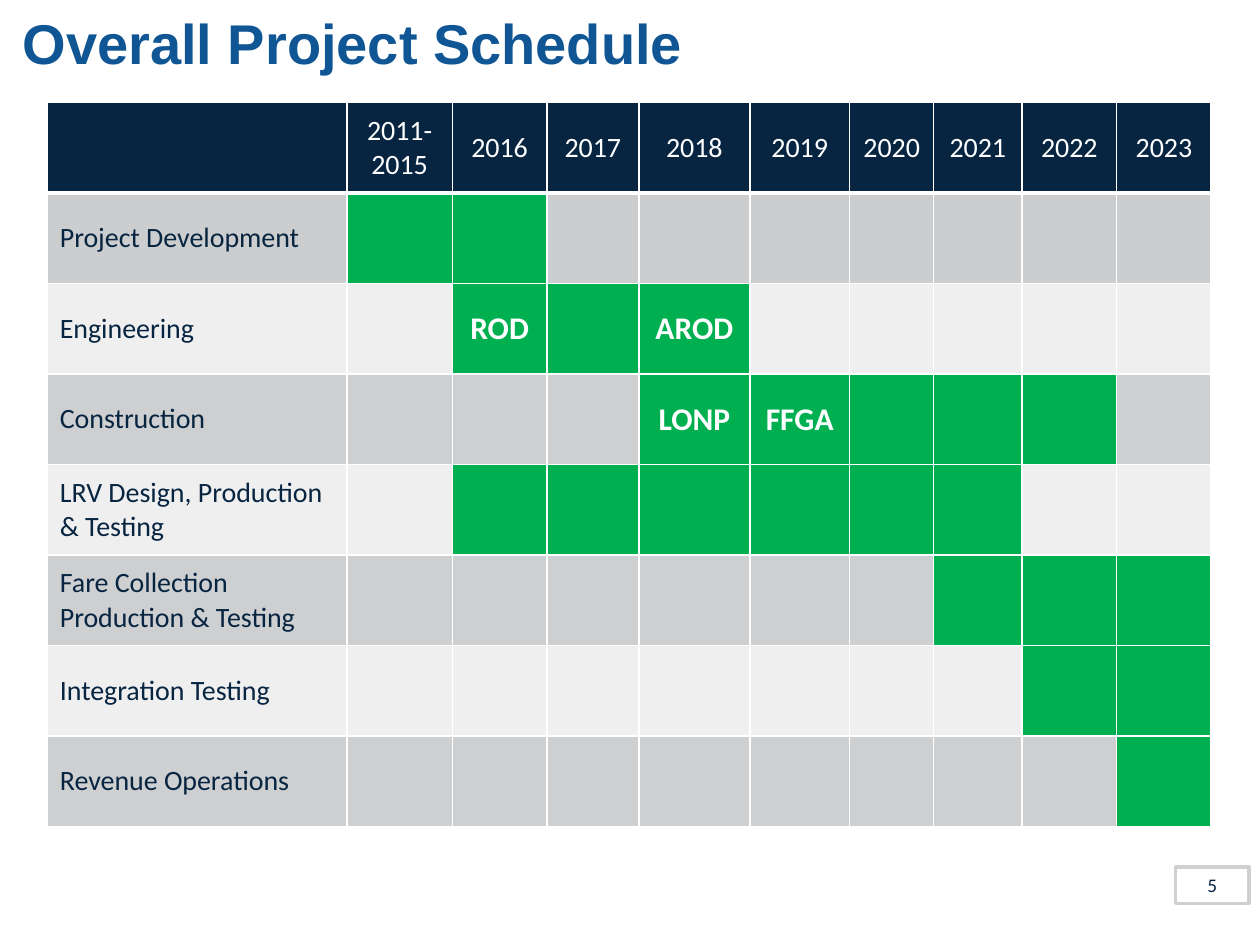
from lxml.etree import SubElement
from pptx import Presentation
from pptx.dml.color import RGBColor
from pptx.enum.shapes import MSO_SHAPE as Preset
from pptx.enum.text import MSO_ANCHOR as Anchor, PP_ALIGN as Align
from pptx.oxml.ns import qn
from pptx.util import Pt

NAVY = RGBColor(0x07, 0x25, 0x41)
BLUE = RGBColor(0x10, 0x55, 0x94)
GREEN = RGBColor(0x00, 0xB0, 0x50)
WHITE = RGBColor(0xFF, 0xFF, 0xFF)
EDGE_GREY = RGBColor(0xD0, 0xD0, 0xD2)
FIRST_GREY = RGBColor(0xCC, 0xCD, 0xCF)
DARK_GREY = RGBColor(0xCE, 0xCF, 0xD1)
LIGHT_GREY = RGBColor(0xEF, 0xEF, 0xF0)

YEARS = ["2011-2015"] + [str(year) for year in range(2016, 2024)]
COLUMN_WIDTHS = [171.2, 60.3, 54, 52.6, 63.4, 57.1, 48, 50.4, 54.2, 54]
ROW_HEIGHT = 51.75
PHASES = [
    ("Project Development", 1, 2, {}),
    ("Engineering", 2, 4, {2: "ROD", 4: "AROD"}),
    ("Construction", 4, 8, {4: "LONP", 5: "FFGA"}),
    ("LRV Design, Production & Testing", 2, 7, {}),
    ("Fare Collection Production & Testing", 7, 9, {}),
    ("Integration Testing", 8, 9, {}),
    ("Revenue Operations", 9, 9, {}),
]


class SlideBuilder:
    """Draws the elements of one slide in a shared style."""

    def __init__(self, slide):
        self.slide = slide
        self.title_font = {"name": "Arial", "size": Pt(32), "bold": True}
        self.body_font = {"name": "Calibri", "size": Pt(16), "bold": False}
        self.milestone_font = {"name": "Calibri", "size": Pt(18), "bold": True}
        self.number_font = {"name": "Calibri", "size": Pt(11), "bold": False}

    def label(self, frame, text, font, color, align=Align.LEFT):
        frame.word_wrap = True
        frame.vertical_anchor = Anchor.MIDDLE
        paragraph = frame.paragraphs[0]
        paragraph.alignment = align
        run = paragraph.add_run()
        run.text = text
        for name, value in font.items():
            setattr(run.font, name, value)
        run.font.color.rgb = color

    def title(self, text, left, top, width, height):
        heading = self.slide.shapes.add_textbox(Pt(left), Pt(top), Pt(width), Pt(height))
        self.label(heading.text_frame, text, self.title_font, BLUE)

    def page_number(self, text, left, top, width, height):
        badge = self.slide.shapes.add_shape(
            Preset.RECTANGLE, Pt(left), Pt(top), Pt(width), Pt(height))
        badge.shadow.inherit = False
        badge.fill.solid()
        badge.fill.fore_color.rgb = WHITE
        badge.line.color.rgb = EDGE_GREY
        badge.line.width = Pt(2)
        self.label(badge.text_frame, text, self.number_font, NAVY, Align.CENTER)

    def cell(self, cell, color, bottom=1):
        properties = cell._tc.get_or_add_tcPr()
        for side, width in {"L": 1, "R": 1, "T": 1, "B": bottom}.items():
            edge = SubElement(properties, qn(f"a:ln{side}"), w=str(Pt(width)))
            paint = SubElement(edge, qn("a:solidFill"))
            SubElement(paint, qn("a:srgbClr"), val=str(WHITE))
        cell.fill.solid()
        cell.fill.fore_color.rgb = color
        cell.vertical_anchor = Anchor.MIDDLE

    def schedule(self, left, top):
        row_count = len(PHASES) + 1
        table = self.slide.shapes.add_table(
            row_count, len(COLUMN_WIDTHS), Pt(left), Pt(top),
            Pt(sum(COLUMN_WIDTHS)), Pt(ROW_HEIGHT * row_count)).table
        for column, width in zip(table.columns, COLUMN_WIDTHS):
            column.width = Pt(width)
        for row in table.rows:
            row.height = Pt(ROW_HEIGHT)
        for index, year in enumerate([""] + YEARS):
            header = table.cell(0, index)
            self.cell(header, NAVY, bottom=3)
            if year:
                self.label(header.text_frame, year, self.body_font, WHITE, Align.CENTER)
        for number, (phase, start, end, milestones) in enumerate(PHASES, 1):
            band = LIGHT_GREY if number % 2 == 0 else DARK_GREY
            if number == 1:
                band = FIRST_GREY
            for index in range(len(COLUMN_WIDTHS)):
                slot = table.cell(number, index)
                self.cell(slot, GREEN if start <= index <= end else band)
                if index in milestones:
                    self.label(slot.text_frame, milestones[index],
                               self.milestone_font, WHITE, Align.CENTER)
            self.label(table.cell(number, 0).text_frame, phase, self.body_font, NAVY)


def main():
    deck = Presentation()
    deck.slide_width, deck.slide_height = Pt(720), Pt(540)
    builder = SlideBuilder(deck.slides.add_slide(deck.slide_layouts[6]))
    builder.page_number("5", 671.8, 495.4, 41.8, 20.9)
    builder.title("Overall Project Schedule", 5.8, -5.8, 624, 60)
    builder.schedule(27, 58.5)
    deck.save("out.pptx")


if __name__ == "__main__":
    main()
